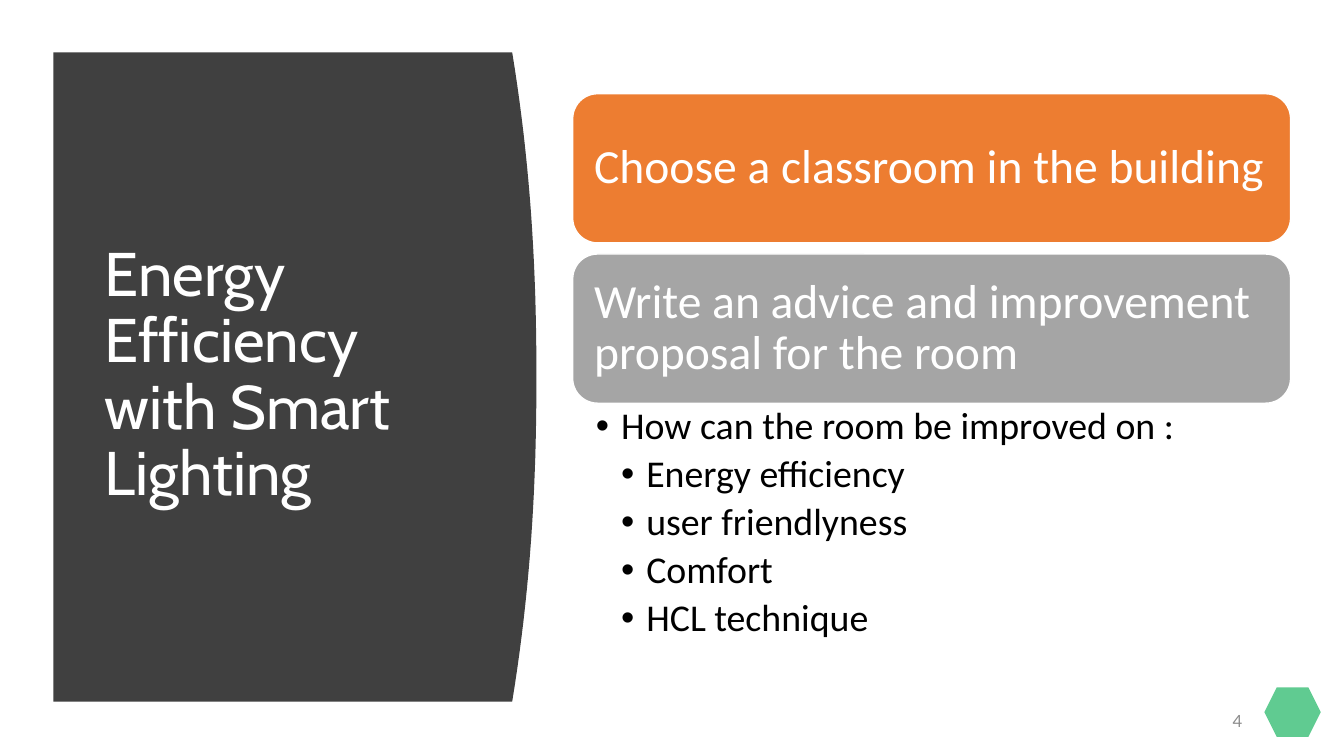
from dataclasses import dataclass

from lxml import etree
from pptx import Presentation
from pptx.dml.color import RGBColor
from pptx.enum.shapes import MSO_SHAPE
from pptx.enum.text import MSO_ANCHOR, MSO_AUTO_SIZE, PP_ALIGN
from pptx.oxml.ns import qn
from pptx.util import Inches, Pt

ROUNDED, HEXAGON = MSO_SHAPE.ROUNDED_RECTANGLE, MSO_SHAPE.HEXAGON
TOP, MIDDLE = MSO_ANCHOR.TOP, MSO_ANCHOR.MIDDLE
LEFT, RIGHT = PP_ALIGN.LEFT, PP_ALIGN.RIGHT
NO_FIT = MSO_AUTO_SIZE.NONE


@dataclass(frozen=True)
class Theme:
    white: str = "FFFFFF"
    black: str = "000000"
    panel: str = "404040"
    orange: str = "ED7D31"
    gray: str = "A5A5A5"
    green: str = "4DC584"
    number: str = "8C8C8C"
    title_font: str = "Cabin"
    body_font: str = "Calibri"
    number_font: str = "Lato"
    title_size: int = 44
    card_size: int = 34
    list_size: int = 27
    number_size: int = 12


THEME = Theme()

TITLE = "Energy Efficiency with Smart Lighting"
CARDS = [
    ("Choose a classroom in the building", THEME.orange),
    ("Write an advice and improvement proposal for the room", THEME.gray),
]
QUESTIONS = [
    ("How can the room be improved on :", 0),
    ("Energy efficiency", 1),
    ("user friendlyness", 1),
    ("Comfort", 1),
    ("HCL technique", 1),
]


def place(shape, box):
    shape.left, shape.top, shape.width, shape.height = map(Inches, box)


def paint(shape, fill, line=None):
    shape.shadow.inherit = False
    shape.fill.solid()
    shape.fill.fore_color.rgb = RGBColor.from_string(fill)
    if line:
        shape.line.color.rgb = RGBColor.from_string(line)
        shape.line.width = Pt(1)
    else:
        shape.line.fill.background()


def set_frame(frame, anchor, margins=(0.1, 0.05, 0.1, 0.05)):
    frame.word_wrap = True
    frame.auto_size = NO_FIT
    frame.vertical_anchor = anchor
    for side, margin in zip(("left", "top", "right", "bottom"), margins):
        setattr(frame, f"margin_{side}", Inches(margin))


def write(paragraph, text, font, size, color, **formats):
    paragraph.text = text
    formats = {"alignment": LEFT, "line_spacing": 0.9,
               "space_before": Pt(0), "space_after": Pt(0)} | formats
    for name, value in formats.items():
        setattr(paragraph, name, value)
    paragraph.font.name = font
    paragraph.font.size = Pt(size)
    paragraph.font.color.rgb = RGBColor.from_string(color)


def add_bullet(paragraph, indent, hanging):
    properties = paragraph._p.get_or_add_pPr()
    properties.set("marL", str(Inches(indent)))
    properties.set("indent", str(-Inches(hanging)))
    font = etree.SubElement(properties, qn("a:buFont"))
    font.set("typeface", "Arial")
    etree.SubElement(properties, qn("a:buChar")).set("char", "•")


def add_title_panel(slide, box):
    """Dark panel whose right edge bulges outwards, with the title on it."""
    left, top, width, height = box
    bulge, steps = 0.24, 40
    edge = []
    for step in range(steps + 1):
        share = step / steps
        x = left + width - bulge * abs(2 * share - 1) ** 2.2
        edge.append((Inches(x), Inches(top + height * share)))
    builder = slide.shapes.build_freeform(Inches(left), Inches(top))
    builder.add_line_segments(edge + [(Inches(left), Inches(top + height))])
    panel = builder.convert_to_shape()
    paint(panel, THEME.panel)

    title = slide.shapes.title
    place(title, (left + 0.41, top + 0.59, 3.74, 5.24))
    set_frame(title.text_frame, MIDDLE)
    write(title.text_frame.paragraphs[0], TITLE,
          THEME.title_font, THEME.title_size, THEME.white)
    # Bring the title in front of the panel
    panel._element.addnext(title._element)


def add_cards(slide, box):
    """Equal rounded cards stacked in the box."""
    left, top, width, height = box
    gap = 0.11
    card_height = (height - gap * (len(CARDS) - 1)) / len(CARDS)
    for index, (text, color) in enumerate(CARDS):
        card = slide.shapes.add_shape(ROUNDED, 0, 0, 0, 0)
        place(card, (left, top + index * (card_height + gap), width, card_height))
        paint(card, color, THEME.white)
        set_frame(card.text_frame, MIDDLE, (0.14,) * 4)
        write(card.text_frame.paragraphs[0], text,
              THEME.body_font, THEME.card_size, THEME.white)


def add_questions(slide, box):
    """Bulleted list in the body placeholder."""
    body = slide.placeholders[1]
    place(body, box)
    frame = body.text_frame
    set_frame(frame, TOP, (0.23, 0.05, 0.26, 0.05))
    for index, (text, level) in enumerate(QUESTIONS):
        paragraph = frame.add_paragraph() if index else frame.paragraphs[0]
        add_bullet(paragraph, 0.25 * (level + 1), 0.25)
        write(paragraph, text, THEME.body_font, THEME.list_size, THEME.black,
              level=level, space_after=Pt(5))


def add_footer(slide, box):
    """Slide number, with a translucent hexagon at the right."""
    left, top, width, height = box
    hexagon = slide.shapes.add_shape(HEXAGON, 0, 0, 0, 0)
    place(hexagon, (left + width - 0.56, top, 0.56, 0.49))
    paint(hexagon, THEME.green)
    color = hexagon._element.spPr.find(qn("a:solidFill"))[0]
    etree.SubElement(color, qn("a:alpha")).set("val", "89000")

    number = slide.shapes.add_textbox(0, 0, 0, 0)
    place(number, (left, top + height - 0.4, 0.69, 0.4))
    set_frame(number.text_frame, MIDDLE)
    write(number.text_frame.paragraphs[0], "4", THEME.number_font,
          THEME.number_size, THEME.number,
          alignment=RIGHT, line_spacing=1.0, space_after=Pt(6))


def main():
    presentation = Presentation()
    presentation.slide_width = Inches(13.33)
    presentation.slide_height = Inches(7.5)
    slide = presentation.slides.add_slide(presentation.slide_layouts[1])
    add_title_panel(slide, (0.53, 0.52, 4.79, 6.44))
    add_cards(slide, (5.68, 0.93, 7.12, 3.07))
    add_questions(slide, (5.68, 3.99, 7.12, 2.54))
    add_footer(slide, (11.73, 6.82, 1.37, 0.53))
    presentation.save("out.pptx")


if __name__ == "__main__":
    main()
